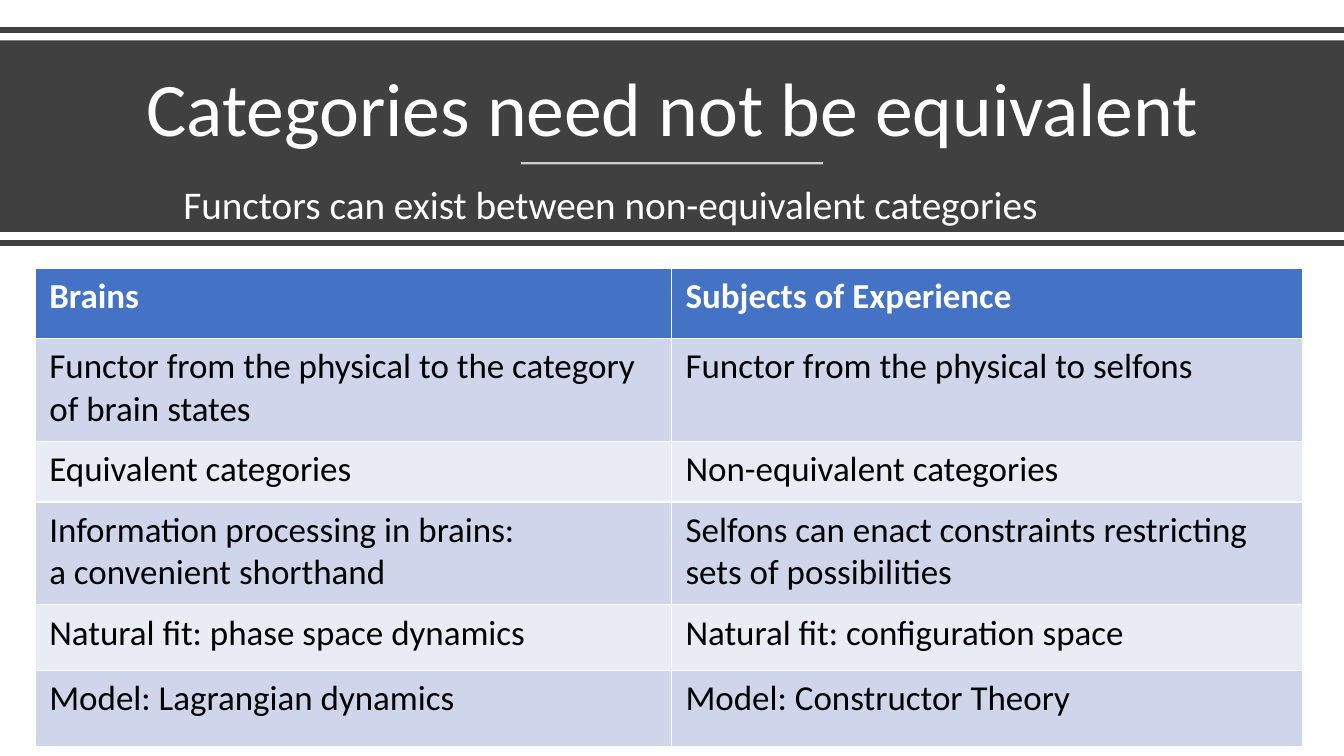
from lxml import etree
from pptx import Presentation
from pptx.dml.color import RGBColor
from pptx.enum.shapes import MSO_CONNECTOR, MSO_SHAPE
from pptx.enum.text import MSO_ANCHOR, MSO_AUTO_SIZE, PP_ALIGN
from pptx.oxml.ns import qn
from pptx.util import Inches, Pt

SLIDE_WIDTH, SLIDE_HEIGHT = 13.33, 7.5
FONT = "Calibri"
WHITE, BLACK, CHARCOAL = "FFFFFF", "000000", "404040"
HEADER_FILL, BAND_FILLS = "4472C4", ("CFD5EA", "E9EBF5")

COLUMN_WIDTHS = (6.31, 6.26)
ROW_HEIGHTS = (0.7, 1.02, 0.6, 1.02, 0.65, 0.76)
COMPARISON = (
    ("Brains", "Subjects of Experience"),
    ("Functor from the physical to the category of brain states",
     "Functor from the physical to selfons"),
    ("Equivalent categories", "Non-equivalent categories"),
    ("Information processing in brains:\na convenient shorthand",
     "Selfons can enact constraints restricting sets of possibilities"),
    ("Natural fit: phase space dynamics", "Natural fit: configuration space"),
    ("Model: Lagrangian dynamics", "Model: Constructor Theory"),
)


def rgb(value):
    return RGBColor.from_string(value)


def set_font(paragraph, size, color, bold=False):
    font = paragraph.font
    font.name, font.size, font.bold = FONT, Pt(size), bold
    font.color.rgb = rgb(color)


def add_rule(slide, left, top, width, color, weight, opacity=100):
    """Draw a horizontal line; opacity is in percent."""
    rule = slide.shapes.add_connector(
        MSO_CONNECTOR.STRAIGHT, Inches(left), Inches(top),
        Inches(left + width), Inches(top))
    rule.line.width = Pt(weight)
    rule.line.color.rgb = rgb(color)
    properties = rule._element.spPr
    if opacity < 100:
        solid_color = properties.find(".//" + qn("a:srgbClr"))
        etree.SubElement(solid_color, qn("a:alpha"), val=str(opacity * 1000))
    etree.SubElement(properties, qn("a:effectLst"))


def add_text(slide, left, top, width, height, text, size):
    box = slide.shapes.add_textbox(
        Inches(left), Inches(top), Inches(width), Inches(height))
    frame = box.text_frame
    paragraph = frame.paragraphs[0]
    paragraph.text = text
    set_font(paragraph, size, WHITE)
    return frame, paragraph


def add_banner(slide, left, top, width, height):
    """Place the dark title band and the rules around and inside it."""
    add_rule(slide, left, top - 0.1, width, CHARCOAL, 4)
    band = slide.shapes.add_shape(
        MSO_SHAPE.RECTANGLE, Inches(left), Inches(top),
        Inches(width), Inches(height))
    band.shadow.inherit = False
    band.fill.solid()
    band.fill.fore_color.rgb = rgb(CHARCOAL)
    band.line.fill.background()

    title_frame, title = add_text(
        slide, left + 0.58, top + 0.14, width - 1.15, 1.02,
        "Categories need not be equivalent", 54)
    title_frame.word_wrap = True
    title_frame.vertical_anchor = MSO_ANCHOR.BOTTOM
    title.alignment = PP_ALIGN.CENTER
    title.line_spacing = 0.9

    divider_width = 3
    add_rule(slide, left + (width - divider_width) / 2, top + 1.22,
             divider_width, WHITE, 1.5, opacity=75)
    add_rule(slide, left, top + height + 0.11, width, CHARCOAL, 4)

    subtitle_frame, subtitle = add_text(
        slide, left + 1.72, top + 1.34, 8.77, 0.57,
        "Functors can exist between non-equivalent categories", 28)
    subtitle_frame.word_wrap = False
    subtitle_frame.auto_size = MSO_AUTO_SIZE.SHAPE_TO_FIT_TEXT
    subtitle.space_after = Pt(6)


def add_comparison(slide, left, top):
    """Place the table; its default style supplies the white borders."""
    table = slide.shapes.add_table(
        len(ROW_HEIGHTS), len(COLUMN_WIDTHS), Inches(left), Inches(top),
        Inches(sum(COLUMN_WIDTHS)), Inches(sum(ROW_HEIGHTS))).table
    for column, width in zip(table.columns, COLUMN_WIDTHS):
        column.width = Inches(width)
    for index, (row, height, texts) in enumerate(
            zip(table.rows, ROW_HEIGHTS, COMPARISON)):
        row.height = Inches(height)
        is_header = index == 0
        fill = HEADER_FILL if is_header else BAND_FILLS[(index - 1) % 2]
        for cell, text in zip(row.cells, texts):
            cell.fill.solid()
            cell.fill.fore_color.rgb = rgb(fill)
            cell.margin_left = cell.margin_right = Inches(0.14)
            cell.margin_top = cell.margin_bottom = Inches(0.07)
            cell.text_frame.text = text
            for paragraph in cell.text_frame.paragraphs:
                set_font(paragraph, 25, WHITE if is_header else BLACK, is_header)


def main():
    presentation = Presentation()
    presentation.slide_width = Inches(SLIDE_WIDTH)
    presentation.slide_height = Inches(SLIDE_HEIGHT)
    slide = presentation.slides.add_slide(presentation.slide_layouts[6])
    add_banner(slide, 0, 0.4, SLIDE_WIDTH, 1.9)
    add_comparison(slide, 0.35, 2.66)
    presentation.save("out.pptx")


if __name__ == "__main__":
    main()
